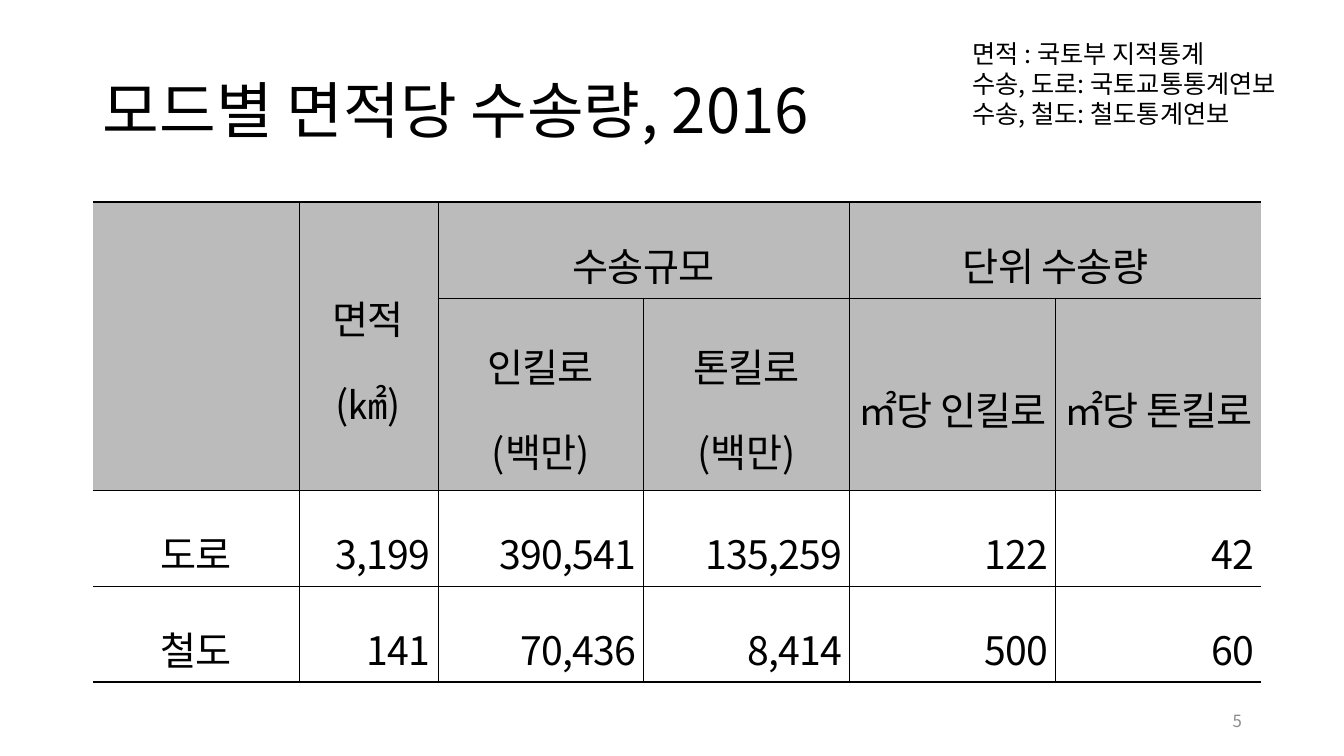
from dataclasses import dataclass
from typing import Any

from lxml.etree import SubElement
from pptx import Presentation
from pptx.dml.color import RGBColor
from pptx.enum.text import MSO_ANCHOR as Anchor, MSO_AUTO_SIZE as AutoSize, PP_ALIGN as Align
from pptx.oxml import parse_xml
from pptx.oxml.ns import nsdecls, qn
from pptx.util import Cm, Pt


@dataclass(frozen=True)
class Theme:
    font: str = "Noto Sans CJK KR"
    ink: str = "000000"
    muted: str = "8C8C8C"
    header: str = "BBBBBB"
    title_size: int = 44
    table_size: int = 28
    source_size: int = 18
    number_size: int = 12
    thin: float = 0.28
    thick: float = 1.41


@dataclass(frozen=True)
class TextPart:
    lines: tuple[str, ...]
    left: float
    top: float
    width: float
    height: float
    size: int
    color: str
    frame_format: dict[str, Any]
    paragraph_format: dict[str, Any]


@dataclass(frozen=True)
class Heading:
    text: str
    row: int
    column: int
    row_span: int = 1
    column_span: int = 1


THEME = Theme()
TITLE = TextPart(
    ("모드별 면적당 수송량, 2016",), 2.34, 1.02, 29.21, 3.68, THEME.title_size, THEME.ink,
    {"vertical_anchor": Anchor.MIDDLE, "word_wrap": True, "auto_size": AutoSize.NONE},
    {"alignment": Align.LEFT, "line_spacing": 0.9},
)
SOURCES = TextPart(
    ("면적 : 국토부 지적통계", "수송, 도로: 국토교통통계연보", "수송, 철도: 철도통계연보"),
    24.26, 0.84, 8.94, 2.57, THEME.source_size, THEME.ink,
    {"word_wrap": False, "auto_size": AutoSize.SHAPE_TO_FIT_TEXT},
    {"alignment": Align.LEFT},
)
PAGE_NUMBER = TextPart(
    ("5",), 23.93, 17.65, 7.62, 1.02, THEME.number_size, THEME.muted,
    {"vertical_anchor": Anchor.MIDDLE, "word_wrap": True},
    {"alignment": Align.RIGHT},
)
HEADINGS = (
    Heading("", 0, 0, row_span=2),
    Heading("면적(㎢)", 0, 1, row_span=2),
    Heading("수송규모", 0, 2, column_span=2),
    Heading("단위 수송량", 0, 4, column_span=2),
    Heading("인킬로\n(백만)", 1, 2),
    Heading("톤킬로\n(백만)", 1, 3),
    Heading("㎡당 인킬로", 1, 4),
    Heading("㎡당 톤킬로", 1, 5),
)
MODES = (
    ("도로", "3,199", "390,541", "135,259", "122", "42"),
    ("철도", "141", "70,436", "8,414", "500", "60"),
)
HEADER_ROWS = 2
COLUMN_WIDTHS = (5.19, 3.5, 5.19, 5.19, 5.19, 5.19)
ROW_HEIGHTS = (2.42, 4.84, 2.42, 2.42)
CELL_FORMAT = {
    "vertical_anchor": Anchor.MIDDLE,
    "margin_left": Cm(0.19),
    "margin_right": Cm(0.19),
    "margin_top": Cm(0.04),
    "margin_bottom": Cm(0.04),
}


def apply(target: Any, values: dict[str, Any]) -> None:
    for attribute, value in values.items():
        setattr(target, attribute, value)


def write(paragraph: Any, words: str, size: int, color: str, values: dict[str, Any]) -> None:
    paragraph.text = words
    apply(paragraph, values)
    for run in paragraph.runs:
        apply(run.font, {"size": Pt(size), "name": THEME.font})
        run.font.color.rgb = RGBColor.from_string(color)
        SubElement(run.font._element, qn("a:ea"), typeface=THEME.font)


def place(holder: Any, part: TextPart) -> None:
    apply(holder, {side: Cm(getattr(part, side)) for side in ("left", "top", "width", "height")})
    frame = holder.text_frame
    apply(frame, part.frame_format)
    for index, line in enumerate(part.lines):
        paragraph = frame.paragraphs[0] if index == 0 else frame.add_paragraph()
        write(paragraph, line, part.size, part.color, part.paragraph_format)


def add_text(slide: Any, part: TextPart) -> None:
    place(slide.shapes.add_textbox(0, 0, 0, 0), part)


def set_borders(cell: Any, row: int, column: int) -> None:
    last_row = row + cell.span_height == len(ROW_HEIGHTS)
    last_column = column + cell.span_width == len(COLUMN_WIDTHS)
    weights = {
        "L": THEME.thin if column else 0,
        "R": 0 if last_column else THEME.thin,
        "T": THEME.thin if row else THEME.thick,
        "B": THEME.thick if last_row else THEME.thin,
    }
    properties = cell._tc.get_or_add_tcPr()
    for index, (side, weight) in enumerate(weights.items()):
        paint = f'<a:solidFill><a:srgbClr val="{THEME.ink}"/></a:solidFill>' if weight else "<a:noFill/>"
        properties.insert(index, parse_xml(
            f'<a:ln{side} {nsdecls("a")} w="{int(Pt(weight))}">{paint}</a:ln{side}>'))


def fill_cell(cell: Any, words: str, row: int, column: int) -> None:
    is_number = row >= HEADER_ROWS and column > 0
    apply(cell, CELL_FORMAT)
    paragraph = cell.text_frame.paragraphs[0]
    write(paragraph, words, THEME.table_size, THEME.ink,
          {"alignment": Align.RIGHT if is_number else Align.CENTER, "line_spacing": 1.5})
    for run in paragraph.runs:
        run.font._element.set("spc", "-50")
    if row < HEADER_ROWS:
        cell.fill.solid()
        cell.fill.fore_color.rgb = RGBColor.from_string(THEME.header)
    else:
        cell.fill.background()
    set_borders(cell, row, column)


def add_transport_table(slide: Any) -> None:
    table = slide.shapes.add_table(
        len(ROW_HEIGHTS), len(COLUMN_WIDTHS), Cm(2.34), Cm(5.09),
        Cm(sum(COLUMN_WIDTHS)), Cm(sum(ROW_HEIGHTS))).table
    apply(table, {"first_row": False, "horz_banding": False})
    for column, width in zip(table.columns, COLUMN_WIDTHS):
        column.width = Cm(width)
    for row, height in zip(table.rows, ROW_HEIGHTS):
        row.height = Cm(height)
    for heading in HEADINGS:
        cell = table.cell(heading.row, heading.column)
        if heading.row_span * heading.column_span > 1:
            cell.merge(table.cell(heading.row + heading.row_span - 1,
                                  heading.column + heading.column_span - 1))
        fill_cell(cell, heading.text, heading.row, heading.column)
    for row, mode in enumerate(MODES, HEADER_ROWS):
        for column, value in enumerate(mode):
            fill_cell(table.cell(row, column), value, row, column)


def main() -> None:
    deck = Presentation()
    apply(deck, {"slide_width": Cm(33.87), "slide_height": Cm(19.05)})
    slide = deck.slides.add_slide(deck.slide_layouts.get_by_name("Title Only"))
    place(slide.shapes.title, TITLE)
    add_transport_table(slide)
    add_text(slide, SOURCES)
    add_text(slide, PAGE_NUMBER)
    deck.save("out.pptx")


if __name__ == "__main__":
    main()
